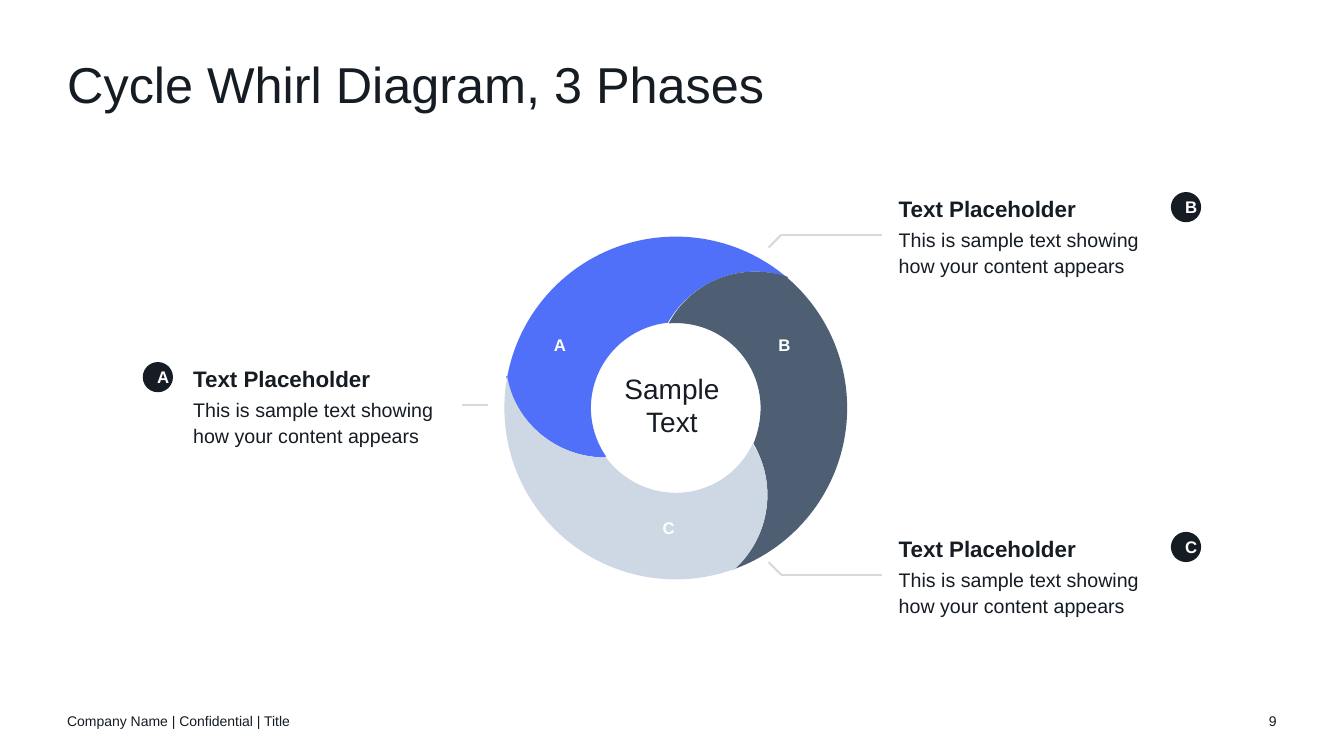
from dataclasses import dataclass
from itertools import pairwise
from math import cos, floor, radians, sin, tan

from lxml.etree import Element, SubElement
from pptx import Presentation
from pptx.dml.color import RGBColor
from pptx.enum.shapes import MSO_CONNECTOR as Connector
from pptx.enum.shapes import MSO_SHAPE as Preset
from pptx.enum.text import MSO_ANCHOR as Anchor
from pptx.enum.text import MSO_AUTO_SIZE as AutoSize
from pptx.enum.text import PP_ALIGN as Align
from pptx.oxml.ns import qn
from pptx.util import Emu, Pt

COLORS = {
    "ink": "151C23",
    "white": "FFFFFF",
    "leader": "D9D9D9",
    "blue": "5070FA",
    "slate": "4E5E73",
    "mist": "CED8E4",
}
FONT = "Arial"

# Grid of 160 columns by 90 rows with square cells
COLUMNS, ROWS, CELL = 160, 90, 76200
MARGIN = 8
BADGE_SIZE = 3.6
CALLOUT_WIDTH, CALLOUT_HEIGHT = 30, 10.2
HEADING = "Text Placeholder"
BODY = "This is sample text showing how your content appears"

# Whirl geometry in cells and degrees, clockwise from the right
CENTER = (80.45, 48.57)
OUTER_RADIUS, INNER_RADIUS = 20.4, 10.1
BLADE_RADIUS, BLADE_OFFSET = 12, 10.4
TIP_ANGLE, ROOT_ANGLE, BLADE_ANGLE = 190.5, 145.2, 216
BLADE_START, BLADE_END = 89.5, 169
PHASE_TURN = 120

Point = tuple[float, float]
Curve = tuple[Point, Point, Point, Point]  # start, two handles, end


@dataclass(frozen=True)
class Phase:
    letter: str
    color: str
    label: Point
    callout: Point
    badge_column: float
    leader: tuple[Point, ...]  # offsets from the callout's top left


PHASES = [
    Phase("A", "blue", (64.85, 39.2), (23, 43.1), 17, ((32.05, 5.1), (35.1, 5.1))),
    Phase("B", "slate", (91.6, 39.2), (107, 22.86), 139.4,
          ((-2, 5.1), (-14, 5.1), (-15.5, 6.6))),
    Phase("C", "mist", (77.8, 61.03), (107, 63.32), 139.4,
          ((-2, 5.1), (-14, 5.1), (-15.5, 3.6))),
]


def cells(*counts: float) -> list[Emu]:
    return [Emu(round(count * CELL)) for count in counts]


def color(name: str) -> RGBColor:
    return RGBColor.from_string(COLORS[name])


def write(paragraph, text: str, *, size: float, ink: str = "ink", bold: bool = False,
          align=Align.LEFT, spacing: float = 1.0, after: float = 0) -> None:
    paragraph.alignment = align
    paragraph.line_spacing = spacing
    paragraph.space_before, paragraph.space_after = Pt(0), Pt(after)
    run = paragraph.add_run()
    run.text = text
    run.font.name, run.font.size, run.font.bold = FONT, Pt(size), bold
    run.font.color.rgb = color(ink)


def prepare_frame(frame, anchor=Anchor.MIDDLE):
    frame.word_wrap, frame.auto_size = True, AutoSize.NONE
    frame.margin_left = frame.margin_right = frame.margin_top = frame.margin_bottom = 0
    frame.vertical_anchor = anchor
    return frame


def add_text(slide, left: float, top: float, width: float, height: float,
             text: str = "", **style):
    box = slide.shapes.add_textbox(*cells(left, top, width, height))
    frame = prepare_frame(box.text_frame)
    if text:
        write(frame.paragraphs[0], text, **style)
    return frame


def fill_plain(shape, fill: str) -> None:
    shape.shadow.inherit = False
    shape.fill.solid()
    shape.fill.fore_color.rgb = color(fill)
    shape.line.fill.background()


def arc(center: Point, radius: float, start: float, end: float) -> list[Curve]:
    """Curves along a circle, split at its extreme points."""
    low, high = sorted((start, end))
    extremes = [90 * turn for turn in range(floor(low / 90) + 1, floor(high / 90) + 1)]
    stops = sorted({low, *extremes, high}, reverse=start > end)

    def place(angle: float, pull: float = 0) -> Point:
        x, y = cos(radians(angle)), sin(radians(angle))
        return (center[0] + radius * (x - pull * y), center[1] + radius * (y + pull * x))

    curves = []
    for first, last in pairwise(stops):
        pull = 4 / 3 * tan(radians(last - first) / 4)
        curves.append((place(first), place(first, pull), place(last, -pull), place(last)))
    return curves


def blade(turn: float, start: float, end: float) -> list[Curve]:
    """Curved edge between two phases."""
    direction = radians(BLADE_ANGLE + turn)
    center = (CENTER[0] + BLADE_OFFSET * cos(direction),
              CENTER[1] + BLADE_OFFSET * sin(direction))
    return arc(center, BLADE_RADIUS, start + turn, end + turn)


def add_segment(slide, phase: Phase, turn: float) -> None:
    following = turn + PHASE_TURN
    curves = [
        *arc(CENTER, OUTER_RADIUS, TIP_ANGLE + turn, TIP_ANGLE + following),
        *blade(following, BLADE_END, BLADE_START),
        *arc(CENTER, INNER_RADIUS, ROOT_ANGLE + following, ROOT_ANGLE + turn),
        *blade(turn, BLADE_START, BLADE_END),
    ]
    builder = slide.shapes.build_freeform(*cells(*curves[0][0]))
    builder.add_line_segments([cells(*curve[3]) for curve in curves], close=True)
    segment = builder.convert_to_shape()
    fill_plain(segment, phase.color)

    # Bend each straight edge with its two handles
    edges = list(segment._element.spPr.iter(qn("a:lnTo")))
    for edge, curve in zip(edges, curves):
        edge.tag = qn("a:cubicBezTo")
        for position, handle in enumerate(curve[1:3]):
            x, y = cells(*handle)
            edge.insert(position, Element(
                qn("a:pt"), x=str(x - segment.left), y=str(y - segment.top)))


def add_leader(slide, points: list[Point]) -> None:
    for start, end in pairwise(points):
        line = slide.shapes.add_connector(Connector.STRAIGHT, *cells(*start, *end))
        line.line.color.rgb, line.line.width = color("leader"), Pt(1.5)
        SubElement(line._element.spPr, qn("a:effectLst"))


def add_callout(slide, phase: Phase) -> None:
    left, top = phase.callout
    add_leader(slide, [(left + x, top + y) for x, y in phase.leader])
    frame = add_text(slide, left, top, CALLOUT_WIDTH, CALLOUT_HEIGHT)
    write(frame.paragraphs[0], HEADING, size=16, bold=True, spacing=1.1, after=3)
    write(frame.add_paragraph(), BODY, size=14, spacing=1.1, after=3)

    badge = slide.shapes.add_shape(
        Preset.OVAL, *cells(phase.badge_column, top, BADGE_SIZE, BADGE_SIZE))
    fill_plain(badge, "ink")
    badge.text_frame.vertical_anchor = Anchor.MIDDLE
    write(badge.text_frame.paragraphs[0], phase.letter, size=12, ink="white",
          bold=True, align=Align.CENTER)


def main() -> None:
    presentation = Presentation()
    presentation.slide_width, presentation.slide_height = cells(COLUMNS, ROWS)
    slide = presentation.slides.add_slide(presentation.slide_layouts[5])

    # Title
    title = slide.shapes.title
    title.left, title.top, title.width, title.height = cells(
        MARGIN, 7.1, COLUMNS - 2 * MARGIN, 7.2)
    frame = prepare_frame(title.text_frame, Anchor.TOP)
    write(frame.paragraphs[0], "Cycle Whirl Diagram, 3 Phases", size=36, spacing=0.9)

    # Whirl
    for index, phase in enumerate(PHASES):
        add_segment(slide, phase, index * PHASE_TURN)
    for phase in PHASES:
        add_text(slide, *phase.label, BADGE_SIZE, BADGE_SIZE, phase.letter,
                 size=12, ink="white", bold=True, align=Align.CENTER)
    add_text(slide, 72.8, 41, 14.4, 14.4, "Sample Text", size=20, align=Align.CENTER)

    # Callouts
    for phase in PHASES:
        add_callout(slide, phase)

    # Footer
    add_text(slide, MARGIN, 83.4, 54, 4.8, "Company Name | Confidential | Title", size=10)
    add_text(slide, 146, 83.4, 6, 4.8, "9", size=10, align=Align.RIGHT)

    presentation.save("out.pptx")


if __name__ == "__main__":
    main()
